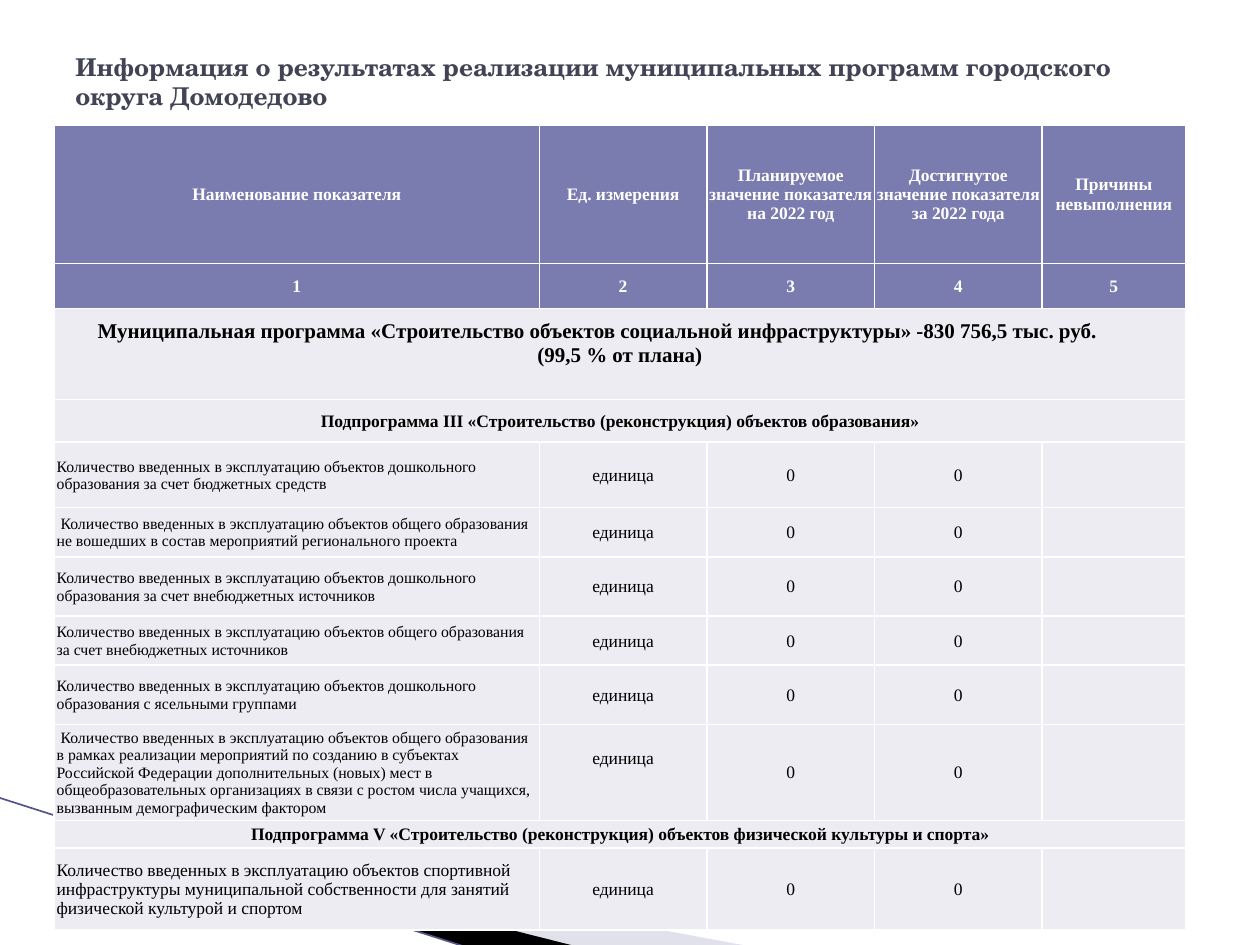
from lxml import etree
from pptx import Presentation
from pptx.dml.color import RGBColor
from pptx.enum import shapes, text
from pptx.oxml import ns
from pptx.util import Inches, Pt

COLORS = {
    "title": "424456", "header": "7A7BAE", "body": "ECECF2", "white": "FFFFFF",
    "black": "000000", "pale": "B6B6D1", "line": "53548A",
}
SERIF = "Times New Roman"
COLUMNS = [3.85, 1.33, 1.33, 1.33, 1.14]
HEADERS = [
    "Наименование показателя",
    "Ед. измерения",
    "Планируемое значение показателя на 2022 год",
    "Достигнутое значение показателя за 2022 года",
    "Причины невыполнения",
]
PROGRAM = [
    "Муниципальная программа «Строительство объектов социальной инфраструктуры» -830 756,5 тыс. руб.",
    "(99,5 % от плана)",
]
EDUCATION = "Подпрограмма III «Строительство (реконструкция) объектов образования»"
SPORT = "Подпрограмма V «Строительство (реконструкция) объектов физической культуры и спорта»"
EDUCATION_INDICATORS = [
    (0.52, "Количество введенных в эксплуатацию объектов дошкольного образования за счет бюджетных средств"),
    (0.39, " Количество введенных в эксплуатацию объектов общего образования не вошедших в состав "
           "мероприятий регионального проекта"),
    (0.47, "Количество введенных в эксплуатацию объектов дошкольного образования за счет внебюджетных источников"),
    (0.39, "Количество введенных в эксплуатацию объектов общего образования за счет внебюджетных источников"),
    (0.47, "Количество введенных в эксплуатацию объектов дошкольного образования с ясельными группами"),
    (0.65, " Количество введенных в эксплуатацию объектов общего образования в рамках реализации мероприятий "
           "по созданию в субъектах Российской Федерации дополнительных (новых) мест в общеобразовательных "
           "организациях в связи с ростом числа учащихся, вызванным демографическим фактором"),
]
SPORT_INDICATOR = (
    "Количество введенных в эксплуатацию объектов спортивной инфраструктуры муниципальной "
    "собственности для занятий физической культурой и спортом"
)


def rgb(name):
    return RGBColor.from_string(COLORS[name])


def style_font(font, name, size, color, bold):
    font.name, font.size, font.bold = name, Pt(size), bold
    font.color.rgb = rgb(color)


def add_wedge(slide, points, color, opacity=100):
    """Draw a filled corner wedge through points given in inches."""
    corners = [(Inches(x), Inches(y)) for x, y in points]
    builder = slide.shapes.build_freeform(*corners[0])
    builder.add_line_segments(corners[1:], close=True)
    wedge = builder.convert_to_shape()
    wedge.shadow.inherit = False
    wedge.fill.solid()
    wedge.fill.fore_color.rgb = rgb(color)
    wedge.line.fill.background()
    if opacity < 100:
        tint = wedge.fill._xPr.find(".//" + ns.qn("a:srgbClr"))
        etree.SubElement(tint, ns.qn("a:alpha"), val=str(opacity * 1000))


def add_corner_line(slide):
    line = slide.shapes.add_connector(
        shapes.MSO_CONNECTOR.STRAIGHT, Inches(-0.01), Inches(6.33), Inches(3.71), Inches(7.52)
    )
    line.line.color.rgb = rgb("line")
    line.line.width = Pt(0.95)
    etree.SubElement(line._element.spPr, ns.qn("a:effectLst"))


def add_title(slide, wording):
    frame = slide.shapes.add_textbox(Inches(0.5), Inches(0.3), Inches(9), Inches(0.69)).text_frame
    frame.word_wrap = True
    frame.vertical_anchor = text.MSO_ANCHOR.MIDDLE
    frame.text = wording
    style_font(frame.paragraphs[0].font, "TeX Gyre Schola", 14, "title", True)


def add_borders(cell):
    """Put a thin white line on every side of the cell."""
    properties = cell._tc.get_or_add_tcPr()
    for position, side in enumerate(("lnL", "lnR", "lnT", "lnB")):
        border = etree.Element(ns.qn(f"a:{side}"), w=str(Pt(1)))
        fill = etree.SubElement(border, ns.qn("a:solidFill"))
        etree.SubElement(fill, ns.qn("a:srgbClr"), val=COLORS["white"])
        properties.insert(position, border)


def fill_cell(cell, wording="", size=10, bold=False, color="black", fill="body", centered=True):
    cell.margin_left = cell.margin_right = Inches(0.01 if centered else 0.02)
    cell.margin_top = Inches(0.01)
    cell.margin_bottom = 0
    cell.vertical_anchor = text.MSO_ANCHOR.MIDDLE
    cell.fill.solid()
    cell.fill.fore_color.rgb = rgb(fill)
    cell.text = wording
    for paragraph in cell.text_frame.paragraphs:
        paragraph.alignment = text.PP_ALIGN.CENTER if centered else text.PP_ALIGN.LEFT
        style_font(paragraph.font, SERIF, size, color, bold)


def fill_header(cells, wordings):
    for cell, wording in zip(cells, wordings):
        fill_cell(cell, wording, bold=True, color="white", fill="header")


def fill_section(cells, wording, size=10):
    for cell in cells[1:]:
        fill_cell(cell)
    cells[0].merge(cells[-1])
    fill_cell(cells[0], wording, size, bold=True)


def fill_indicator(cells, wording, size=9):
    fill_cell(cells[0], wording, size, centered=False)
    for cell, value in zip(cells[1:], ("единица", "0", "0", "")):
        fill_cell(cell, value)


def add_results_table(slide):
    heights = [1.1, 0.36, 0.72, 0.34, *(height for height, _ in EDUCATION_INDICATORS), 0.22, 0.65]
    table = slide.shapes.add_table(
        len(heights), len(COLUMNS), Inches(0.43), Inches(0.99), Inches(sum(COLUMNS)), Inches(sum(heights))
    ).table
    table.first_row = table.horz_banding = False
    for column, width in zip(table.columns, COLUMNS):
        column.width = Inches(width)
    for row, height in zip(table.rows, heights):
        row.height = Inches(height)

    rows = [list(row.cells) for row in table.rows]
    fill_header(rows[0], HEADERS)
    fill_header(rows[1], "12345")
    fill_section(rows[2], "\n".join(PROGRAM), 12)
    rows[2][0].margin_bottom = Inches(0.18)
    for paragraph, right in zip(rows[2][0].text_frame.paragraphs, (0.35, 0)):
        paragraph._p.get_or_add_pPr().set("marR", str(Inches(right)))
    fill_section(rows[3], EDUCATION)
    for cells, (_, wording) in zip(rows[4:], EDUCATION_INDICATORS):
        fill_indicator(cells, wording)
    long_row_unit = rows[-3][1]
    long_row_unit.vertical_anchor = text.MSO_ANCHOR.TOP
    long_row_unit.margin_top = Inches(0.2)
    fill_section(rows[-2], SPORT)
    fill_indicator(rows[-1], SPORT_INDICATOR, 10)
    for cells in rows:
        for cell in cells:
            add_borders(cell)


def main():
    deck = Presentation()
    deck.slide_width, deck.slide_height = Inches(10), Inches(7.5)
    slide = deck.slides.add_slide(deck.slide_layouts[6])
    add_wedge(slide, [(0.55, 6.51), (5.95, 7.51), (4.56, 7.51), (0.55, 6.5)], "pale", 40)
    add_wedge(slide, [(0.53, 6.49), (4.57, 7.51), (3.72, 7.52), (0.54, 6.5)], "black")
    add_corner_line(slide)
    add_title(slide, "Информация о результатах реализации муниципальных программ городского округа Домодедово")
    add_results_table(slide)
    deck.save("out.pptx")


if __name__ == "__main__":
    main()
